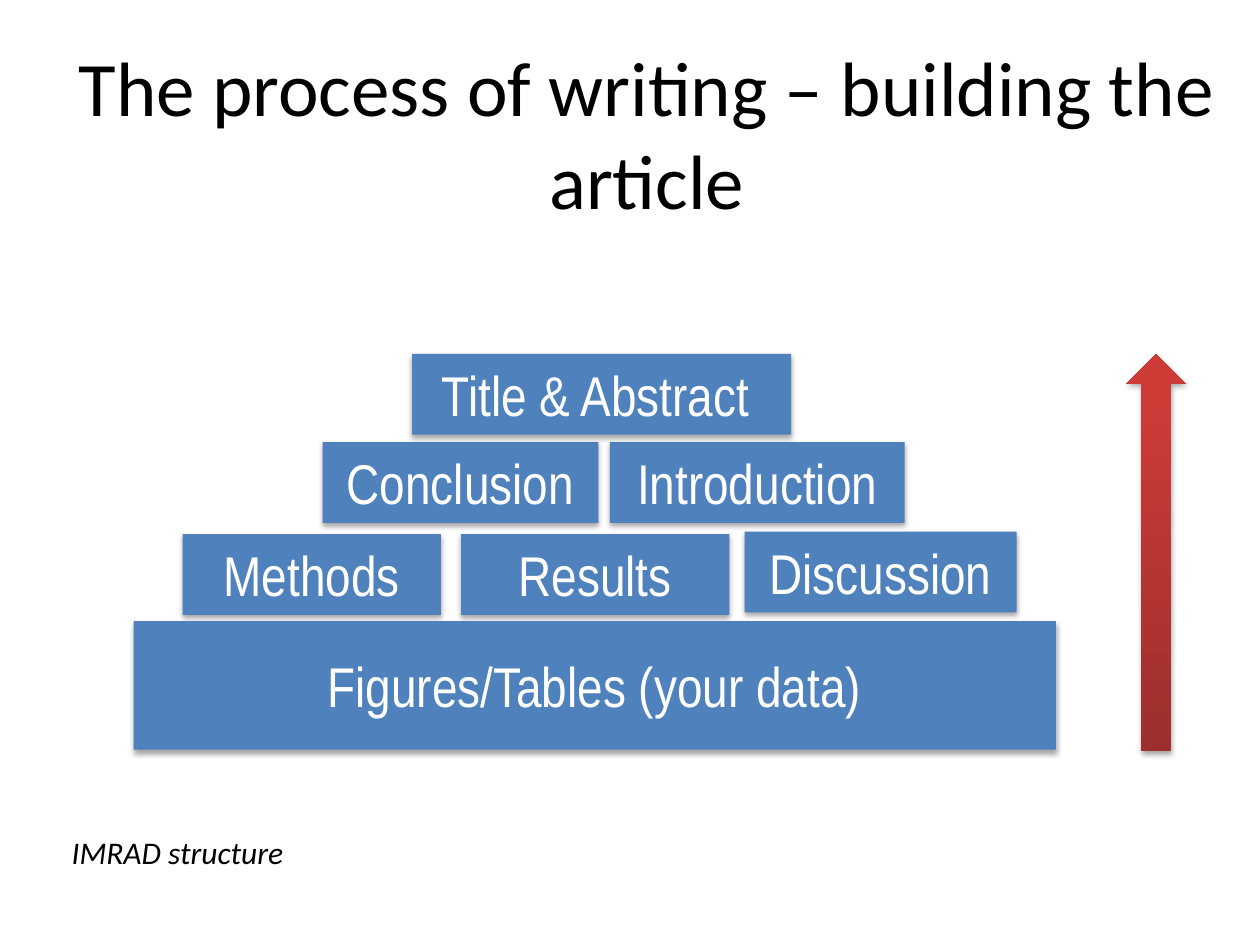
from lxml.etree import SubElement
from pptx import Presentation
from pptx.dml.color import RGBColor
from pptx.enum.shapes import MSO_SHAPE
from pptx.enum.text import MSO_ANCHOR, PP_ALIGN
from pptx.oxml.ns import qn
from pptx.util import Inches, Pt

COLORS = {
    "block": "4F81BD",
    "block_text": "FFFFFF",
    "text": "000000",
    "arrow_base": "9C2F2D",
    "arrow_tip": "CE3B37",
    "shadow": "000000",
}
CELL = Inches(0.1)
COLUMNS, ROWS = 100, 75
BLOCK_HEIGHT = 6.4

BLOCKS = [
    ("Methods", 3.9, 14.3, 20.5, BLOCK_HEIGHT),
    ("Results", 26, 14.3, 21.3, BLOCK_HEIGHT),
    ("Discussion", 48.5, 14.1, 21.6, BLOCK_HEIGHT),
    ("Conclusion", 15, 7, 21.9, BLOCK_HEIGHT),
    ("Figures/Tables (your data)", 0, 21.2, 73.2, 10.2),
    ("Introduction", 37.8, 7, 23.4, BLOCK_HEIGHT),
    ("Title & Abstract ", 22.1, 0, 30.1, BLOCK_HEIGHT),
]


def color(name):
    return RGBColor.from_string(COLORS[name])


def cells(*counts):
    return [round(count * CELL) for count in counts]


def write(shape, text, font_name, size, color_name, alignment, italic=False):
    text_frame = shape.text_frame
    text_frame.word_wrap = True
    text_frame.vertical_anchor = MSO_ANCHOR.MIDDLE
    text_frame.text = text
    paragraph = text_frame.paragraphs[0]
    paragraph.alignment = alignment
    font = paragraph.runs[0].font
    font.name, font.size, font.italic = font_name, Pt(size), italic
    font.color.rgb = color(color_name)


def add_shadow(shape):
    shape.shadow.inherit = False
    effects = shape.element.spPr.find(qn("a:effectLst"))
    shadow = SubElement(effects, qn("a:outerShdw"), blurRad=str(Pt(3.1)),
                        dist=str(Pt(1.8)), dir="5400000", rotWithShape="0")
    shade = SubElement(shadow, qn("a:srgbClr"), val=COLORS["shadow"])
    SubElement(shade, qn("a:alpha"), val="35000")


def add_shaded_shape(slide, preset, box):
    shape = slide.shapes.add_shape(preset, *cells(*box))
    shape.line.fill.background()
    add_shadow(shape)
    return shape


def add_pyramid(slide, left, top):
    for text, column, row, width, height in BLOCKS:
        box = (left + column, top + row, width, height)
        block = add_shaded_shape(slide, MSO_SHAPE.RECTANGLE, box)
        block.fill.solid()
        block.fill.fore_color.rgb = color("block")
        write(block, text, "Arial Narrow", 32, "block_text", PP_ALIGN.CENTER)


def add_direction_arrow(slide, box):
    arrow = add_shaded_shape(slide, MSO_SHAPE.UP_ARROW, box)
    arrow.fill.gradient()
    arrow.fill.gradient_angle = 90
    stops = zip(arrow.fill.gradient_stops, (0, 0.9), ("arrow_base", "arrow_tip"))
    for stop, position, name in stops:
        stop.position = position
        stop.color.rgb = color(name)


def add_title(slide, box):
    title = slide.shapes.add_textbox(*cells(*box))
    write(title, "The process of writing – building the article",
          "Calibri", 44, "text", PP_ALIGN.CENTER)
    title.text_frame.margin_bottom = Inches(0.78)


def add_caption(slide, box):
    caption = slide.shapes.add_textbox(*cells(*box))
    write(caption, "IMRAD structure", "Calibri", 18, "text", PP_ALIGN.LEFT, italic=True)


def main():
    presentation = Presentation()
    presentation.slide_width, presentation.slide_height = cells(COLUMNS, ROWS)
    slide = presentation.slides.add_slide(presentation.slide_layouts[6])
    add_pyramid(slide, 10.6, 28.1)
    add_direction_arrow(slide, (89.4, 28.1, 4.7, 31.5))
    add_title(slide, (4.7, 7, 93.3, 14.3))
    add_caption(slide, (4.7, 65.6, 21.1, 4))
    presentation.save("out.pptx")


if __name__ == "__main__":
    main()
